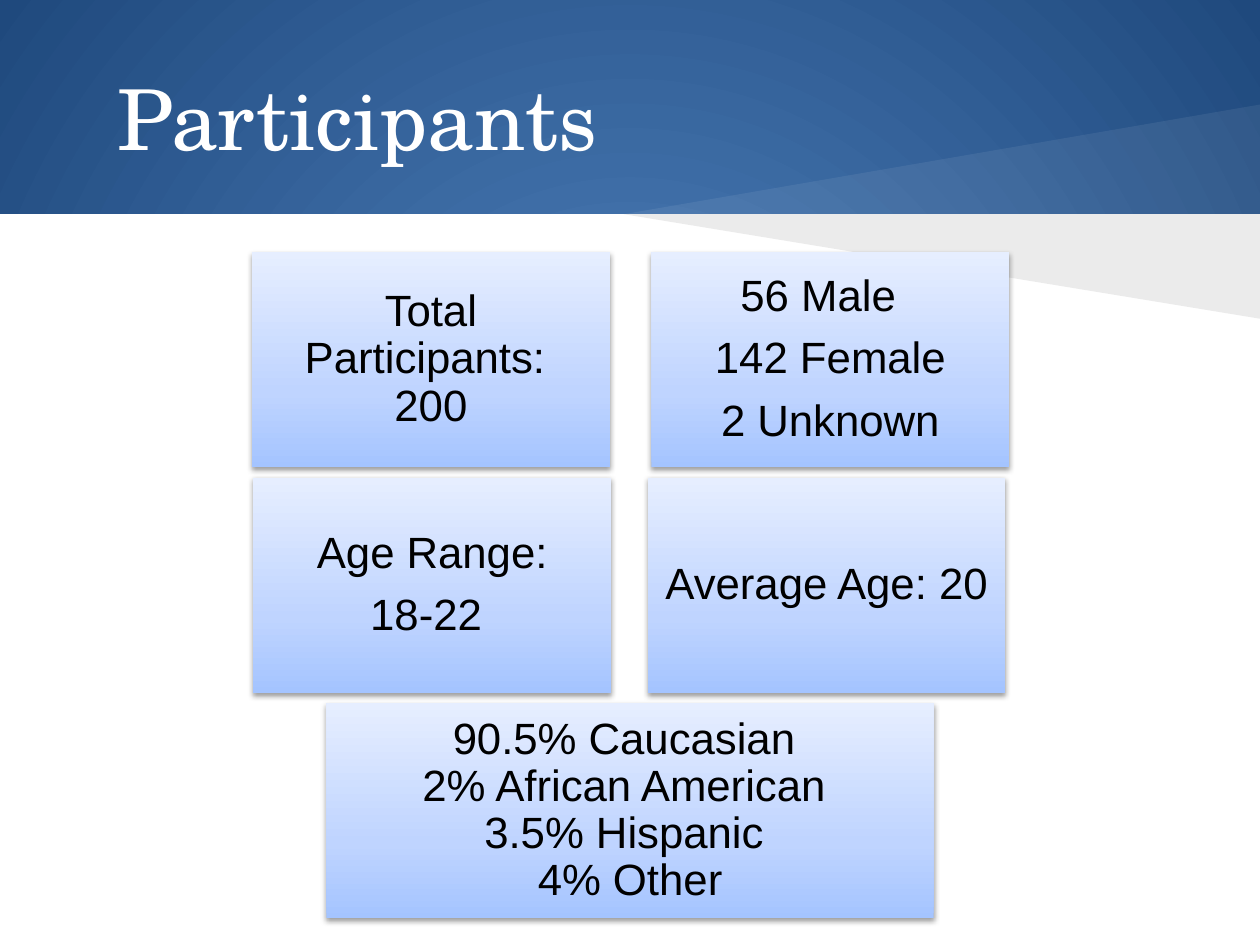
from pptx import Presentation
from pptx.dml.color import RGBColor as Rgb
from pptx.enum.shapes import MSO_SHAPE as Kind
from pptx.enum.text import MSO_ANCHOR as Anchor, PP_ALIGN as Align
from pptx.oxml import parse_xml
from pptx.oxml.ns import nsdecls
from pptx.util import Inches, Pt

WIDE, HIGH = 10, 7.5
BAND = 1.7
TOP, STEP, TALL = 2, 1.79, 1.71
SLIM, BROAD = 2.84, 4.82

BOXES = [
    (0, 2, SLIM, ["Total Participants:  200"]),
    (0, 5.17, SLIM, ["56 Male  ", "142 Female", "2 Unknown"]),
    (1, 2.01, SLIM, ["Age Range:", "18-22 "]),
    (1, 5.14, SLIM, ["Average Age: 20"]),
    (2, 2.59, BROAD, ["90.5% Caucasian \n2% African American \n"
                      "3.5% Hispanic \n4% Other"]),
]


def color(code):
    """Turn a hex string into a colour."""
    return Rgb.from_string(code)


def node(text):
    """Make a drawing element from its markup."""
    tag, rest = text[1:].split(" ", 1)
    return parse_xml(f"<{tag} {nsdecls('a')} {rest}")


def blend(fill, root, stops, way):
    """Give a fill its gradient stops and direction."""
    fill.gradient()
    grad = root.xpath(".//a:gradFill")[0]
    grad.clear()
    marks = "".join(f'<a:gs pos="{pos * 1000}"><a:srgbClr val="{code}"/></a:gs>'
                    for pos, code in stops)
    grad.append(node(f"<a:gsLst >{marks}</a:gsLst>"))
    grad.append(node(way))


def plain(shape, code, alpha=100):
    """Fill a shape with one colour, without line or shadow."""
    shape.shadow.inherit = False
    shape.line.fill.background()
    shape.fill.solid()
    shape.fill.fore_color.rgb = color(code)
    tint = shape._element.spPr.xpath("./a:solidFill/a:srgbClr")[0]
    if alpha < 100:
        tint.append(node(f'<a:alpha val="{alpha * 1000}"/>'))


def wedge(slide, rise, code, alpha):
    """Draw a ray from the middle of the band's edge to the right side."""
    pen = slide.shapes.build_freeform(Inches(WIDE), Inches(BAND))
    pen.add_line_segments([(Inches(4.95), Inches(BAND)),
                           (Inches(WIDE), Inches(BAND + rise))])
    plain(pen.convert_to_shape(), code, alpha)


def back(slide):
    """Draw the blue backdrop, the white page and both rays."""
    blend(slide.background.fill, slide._element,
          [(0, "4F81BD"), (100, "1F497D")],
          '<a:path path="circle"><a:fillToRect l="50000" t="50000" '
          'r="50000" b="50000"/></a:path>')
    page = slide.shapes.add_shape(Kind.RECTANGLE, 0, Inches(BAND),
                                  Inches(WIDE), Inches(HIGH - BAND))
    plain(page, "FFFFFF")
    wedge(slide, -0.87, "FFFFFF", 7)
    wedge(slide, 0.83, "000000", 8)


def inset(frame):
    """Set even margins, wrapping and middle anchoring."""
    frame.margin_left = frame.margin_right = Inches(0.1)
    frame.margin_top = frame.margin_bottom = Inches(0.1)
    frame.word_wrap = True
    frame.vertical_anchor = Anchor.MIDDLE


def style(para, face, size, code, align):
    """Format a whole paragraph."""
    para.alignment = align
    para.font.name = face
    para.font.size = Pt(size)
    para.font.color.rgb = color(code)


def head(slide, text):
    """Place and format the title."""
    title = slide.shapes.title
    title.left, title.top = Inches(0.5), Inches(0.3)
    title.width, title.height = Inches(9), Inches(1.25)
    inset(title.text_frame)
    para = title.text_frame.paragraphs[0]
    para.text = text
    style(para, "TeX Gyre Schola", 48, "FFFFFF", Align.LEFT)
    para._p.get_or_add_pPr().set("indent", str(Inches(0.33)))


def box(slide, row, left, width, lines):
    """Draw a shaded box with centred text."""
    shape = slide.shapes.add_shape(
        Kind.RECTANGLE, Inches(left), Inches(TOP + row * STEP),
        Inches(width), Inches(TALL))
    shape.line.fill.background()
    blend(shape.fill, shape._element.spPr,
          [(0, "A4C4FF"), (35, "BFD4FF"), (100, "E6EEFF")],
          '<a:lin ang="16200000" scaled="0"/>')
    shape.shadow.inherit = False
    shape._element.spPr.xpath("./a:effectLst")[0].append(node(
        f'<a:outerShdw blurRad="{Pt(3.1)}" dist="{Pt(1.6)}" dir="5400000" '
        'rotWithShape="0"><a:srgbClr val="000000"><a:alpha val="38000"/>'
        '</a:srgbClr></a:outerShdw>'))
    frame = shape.text_frame
    inset(frame)
    for num, line in enumerate(lines):
        para = frame.add_paragraph() if num else frame.paragraphs[0]
        para.text = line
        para.line_spacing = 0.9
        para.space_after = Pt(8.75)
        style(para, "Arial", 25, "000000", Align.CENTER)


def main():
    """Build and save the slide."""
    deck = Presentation()
    deck.slide_width, deck.slide_height = Inches(WIDE), Inches(HIGH)
    slide = deck.slides.add_slide(deck.slide_layouts[5])
    back(slide)
    head(slide, "Participants")
    for item in BOXES:
        box(slide, *item)
    deck.save("out.pptx")


if __name__ == "__main__":
    main()
